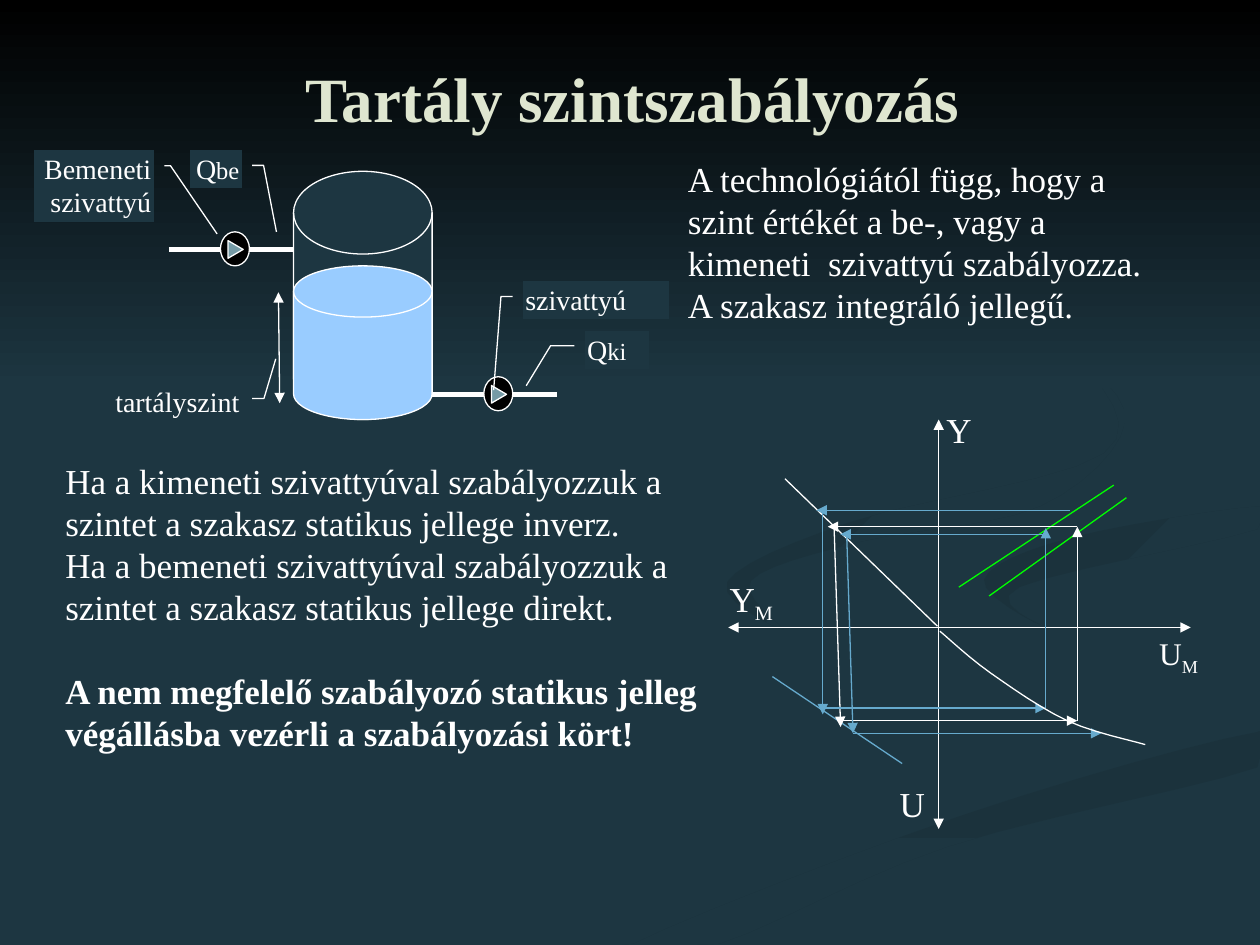
"""Build the slide on tank level control."""
import dataclasses
import itertools
import typing

import lxml.etree
import pptx
import pptx.dml.color
import pptx.enum.shapes
import pptx.enum.text
import pptx.oxml.ns
import pptx.util

HUES = {"deep": "1D3641", "shade": "1B323C", "dim": "1C343E", "black": "000000",
        "white": "FFFFFF", "title": "DFE6D0", "water": "99CCFF", "steel": "759AA5",
        "blue": "66AACD", "green": "00FF00"}
FACE = "Times New Roman"
KIND = pptx.enum.shapes.MSO_SHAPE
SIDE = pptx.enum.text.PP_ALIGN
SLIM = (0.02, 0.01)
FLAT = (0.02, 0)
WIDE = (0.1, 0.05)
BOTH = ("headEnd", "tailEnd")
Spot = tuple[float, float]
Box = tuple[float, float, float, float]


class Run(typing.NamedTuple):
    text: str
    size: float = 20
    bold: bool = False
    base: int = 0


@dataclasses.dataclass
class Swoosh:
    dots: list[Spot]
    hues: tuple[str, str]
    turn: int = 0


@dataclasses.dataclass
class Label:
    box: Box
    level: float
    near: float
    bend: float
    tip: Spot
    runs: list[Run]
    side: typing.Any = SIDE.LEFT


@dataclasses.dataclass
class Line:
    start: Spot
    end: Spot
    hue: str = "white"
    ends: tuple[str, ...] = ()
    width: float = 0.75


@dataclasses.dataclass
class Loop:
    dots: list[Spot]
    past: str
    hue: str


def span(size: float) -> int:
    return pptx.util.Cm(size * 2.54)


def tint(name: str) -> pptx.dml.color.RGBColor:
    return pptx.dml.color.RGBColor.from_string(HUES[name])


def apply(part: typing.Any, style: dict[str, typing.Any]) -> None:
    for key, value in style.items():
        setattr(part, key, value)


def add(shapes: typing.Any, kind: typing.Any, box: Box, fill: str) -> typing.Any:
    shape = shapes.add_shape(kind, *map(span, box))
    shape.shadow.inherit = False
    shape.fill.solid()
    shape.fill.fore_color.rgb = tint(fill)
    shape.line.color.rgb = tint("white")
    shape.line.width = pptx.util.Pt(0.75)
    return shape


def smooth(dots: list[Spot], close: bool, steps: int = 6) -> list[Spot]:
    ring = [dots[-1], *dots, *dots[:2]] if close else [dots[0], *dots, dots[-1]]
    out = [dots[0]]
    for a, b, c, d in zip(ring, ring[1:], ring[2:], ring[3:]):
        for t in (step / steps for step in range(1, steps + 1)):
            out.append(tuple(q + t * (r - p + t * (2 * p - 5 * q + 4 * r - s
                                                   + t * (3 * q - p - 3 * r + s))) / 2
                             for p, q, r, s in zip(a, b, c, d)))
    return [(min(x, 10), min(y, 7.5)) for x, y in out]


def trace(shapes: typing.Any, dots: list[Spot], close: bool) -> typing.Any:
    marks = [(span(x), span(y)) for x, y in smooth(dots, close)]
    pen = shapes.build_freeform(*marks[0])
    pen.add_line_segments(marks[1:], close=close)
    shape = pen.convert_to_shape()
    shape.shadow.inherit = False
    return shape


def shade(shape: typing.Any, hues: tuple[str, str], turn: int) -> None:
    shape.line.fill.background()
    shape.fill.gradient()
    shape.fill.gradient_angle = -turn % 360
    for stop, hue in zip(shape.fill.gradient_stops, hues):
        stop.color.rgb = tint(hue)


def write(shape: typing.Any, paras: list[list[Run]], inset: Spot, hue: str = "white",
          side: typing.Any = SIDE.LEFT, middle: bool = False, gap: float = 0) -> None:
    frame = shape.text_frame
    across, down = map(span, inset)
    anchor, fit = pptx.enum.text.MSO_ANCHOR, pptx.enum.text.MSO_AUTO_SIZE
    apply(frame, {"word_wrap": True, "margin_left": across, "margin_right": across,
                  "margin_top": down, "margin_bottom": down,
                  "vertical_anchor": anchor.MIDDLE if middle else anchor.TOP,
                  "auto_size": fit.NONE if middle else fit.SHAPE_TO_FIT_TEXT})
    for spot, runs in enumerate(paras):
        para = frame.add_paragraph() if spot else frame.paragraphs[0]
        para.alignment = side
        if gap and spot == len(paras) - 1:
            para.space_before = pptx.util.Pt(gap)
        for item in runs:
            run = para.add_run()
            run.text = item.text
            apply(run.font, {"name": FACE, "size": pptx.util.Pt(item.size), "bold": item.bold})
            run.font.color.rgb = tint(hue)
            if item.base:
                run._r.get_or_add_rPr().set("baseline", str(item.base * 1000))


def draw(shapes: typing.Any, item: Line) -> None:
    straight = pptx.enum.shapes.MSO_CONNECTOR.STRAIGHT
    wire = shapes.add_connector(straight, *map(span, item.start + item.end))
    wire.line.color.rgb = tint(item.hue)
    wire.line.width = pptx.util.Pt(item.width)
    edge = wire.line._get_or_add_ln()
    for end in item.ends:
        lxml.etree.SubElement(edge, pptx.oxml.ns.qn("a:" + end), type="triangle")
    lxml.etree.SubElement(edge.getparent(), pptx.oxml.ns.qn("a:effectLst"))


def chain(shapes: typing.Any, loop: Loop) -> None:
    for (start, end), mark in zip(itertools.pairwise(loop.dots), loop.past):
        run, drop = end[0] - start[0], end[1] - start[1]
        rate = 0.05 / max(abs(run), abs(drop)) if mark == "+" else 0
        tip = (end[0] + run * rate, end[1] + drop * rate)
        draw(shapes, Line(start, tip, loop.hue, BOTH[1:]))


def pump(shapes: typing.Any, x: float, y: float) -> None:
    draw(shapes, Line((x, y), (x + 0.99, y), width=3))
    add(shapes, KIND.OVAL, (x + 0.41, y - 0.14, 0.23, 0.27), "black")
    add(shapes, KIND.FLOWCHART_EXTRACT, (x + 0.46, y - 0.06, 0.14, 0.12), "steel").rotation = 90


SWEEPS = [
    Swoosh([(7.81, 5.53), (6.82, 5.19), (5.75, 4.59), (5.86, 4.87), (7.14, 5.3), (7.86, 5.66),
            (7.14, 6.05), (4.99, 6.61), (3, 7.49), (3.61, 7.49), (5.64, 6.65), (7.69, 6.09),
            (7.99, 5.73)], ("deep", "dim")),
    Swoosh([(9.43, 5.7), (8.88, 5.35), (7.58, 4.98), (7.24, 4.64), (7.55, 5.05), (8.68, 5.44),
            (9.18, 5.81), (8.94, 6.05)], ("deep", "dim"), 45),
    Swoosh([(5.03, 7.49), (5.71, 7.49), (7.52, 6.72), (9.98, 6.09), (9.98, 5.81),
            (7.64, 6.47)], ("shade", "deep"), 90),
    Swoosh([(7.81, 4.6), (8.26, 4.96), (8.09, 4.66), (9.98, 4.2), (9.98, 4.02), (8.49, 4.27)],
           ("shade", "deep"), 45),
    Swoosh([(6.83, 4.3), (8.25, 4.02), (8.93, 3.35), (8.43, 2.75), (7.62, 2.33), (8.55, 2.85),
            (8.76, 3.6), (6.76, 4.14), (5.77, 4.62), (6.22, 5), (5.96, 4.61)],
           ("shade", "deep"), 45)]
LABELS = [
    Label((1.51, 1.19, 0.41, 0.3), 0.41, 1.2, 1.42, (2.17, 1.67),
          [Run("Q", 16), Run("be", 14)], SIDE.RIGHT),
    Label((4.64, 2.63, 0.51, 0.3), 0.38, -0.16, -0.53, (1.44, -0.91),
          [Run("Q", 16), Run("ki", 14)]),
    Label((0.75, 3.04, 1.17, 0.3), 0.41, 1.07, 1.15, (-0.64, 1.23),
          [Run("tartályszint", 16)], SIDE.RIGHT),
    Label((4.15, 2.23, 1.16, 0.3), 0.41, -0.07, -0.15, (2.89, -0.2), [Run("szivattyú", 16)]),
    Label((0.27, 1.19, 0.95, 0.57), 0.22, 1.09, 1.14, (1.17, 1.53),
          [Run("Bemeneti szivattyú", 16)], SIDE.RIGHT)]
LINES = [
    Line((2.21, 2.32), (2.22, 3.2), ends=BOTH), Line((7.45, 6.58), (7.45, 3.33), ends=BOTH),
    Line((5.78, 4.98), (9.45, 4.98), ends=BOTH), Line((6.23, 3.8), (7.44, 4.97)),
    Line((6.13, 5.37), (7.16, 6.06), "blue"),
    Line((8.84, 3.85), (7.61, 4.66), "green"), Line((8.94, 3.95), (7.85, 4.73), "green")]
LOOPS = [
    Loop([(8.55, 5.72), (8.55, 4.18), (6.62, 4.18), (6.67, 5.72), (8.55, 5.72)], ".++.", "white"),
    Loop([(8.49, 4.05), (6.53, 4.05), (6.53, 5.62), (8.3, 5.62), (8.3, 4.24), (6.72, 4.24),
          (6.77, 5.82), (8.74, 5.82)], "++.++..", "blue")]
TEXTS = [
    ((0.77, 0.45, 8.5, 0.64), [[Run("Tartály szintszabályozás", 36, True)]], WIDE,
     {"hue": "title", "side": SIDE.CENTER, "middle": True}),
    ((5.44, 1.24, 3.69, 1.36),
     [[Run("A technológiától függ, hogy a szint értékét a be-, vagy a kimeneti  szivattyú szabályozza.")],
      [Run("A szakasz integráló jellegű.")]], SLIM, {}),
    ((0.42, 3.6, 5.28, 2.43),
     [[Run("Ha a kimeneti szivattyúval szabályozzuk a szintet a szakasz statikus jellege inverz.")],
      [Run("Ha a bemeneti szivattyúval szabályozzuk a szintet a szakasz statikus jellege direkt.")],
      [Run("A nem megfelelő szabályozó statikus jelleg végállásba vezérli a szabályozási kört!",
           bold=True)]], WIDE, {"gap": 24}),
    ((7.49, 3.24, 0.28, 0.33), [[Run("Y")]], FLAT, {}),
    ((9.18, 5.03, 0.4, 0.3), [[Run("U", 18), Run("M", 18, base=-25)]], FLAT, {}),
    ((5.77, 4.58, 0.43, 0.33), [[Run("Y"), Run("M", base=-25)]], FLAT, {}),
    ((7.12, 6.21, 0.28, 0.33), [[Run("U")]], FLAT, {})]


def main() -> None:
    deck = pptx.Presentation()
    apply(deck, {"slide_width": span(10), "slide_height": span(7.5)})
    slide = deck.slides.add_slide(deck.slide_layouts[6])
    slide.background.fill.solid()
    slide.background.fill.fore_color.rgb = tint("deep")
    shapes = slide.shapes
    for item in SWEEPS:
        shade(trace(shapes, item.dots, True), item.hues, item.turn)
    shade(add(shapes, KIND.RECTANGLE, (0, 0, 10, 3.08), "deep"), ("black", "deep"), 90)
    for box, paras, inset, style in TEXTS:
        write(shapes.add_textbox(*map(span, box)), paras, inset, **style)
    for top, fill in ((1.36, "deep"), (2.11, "water")):
        add(shapes, KIND.FLOWCHART_MAGNETIC_DISK, (2.33, top, 1.1, 3.33 - top), fill)
    pump(shapes, 3.43, 3.13)
    pump(shapes, 1.34, 1.98)
    for item in LABELS:
        shape = add(shapes, KIND.LINE_CALLOUT_2_NO_BORDER, item.box, "deep")
        for spot, bend in enumerate((item.level, item.near, item.level, item.bend, *item.tip)):
            shape.adjustments[spot] = bend
        write(shape, [item.runs], SLIM, side=item.side)
    for item in LINES:
        draw(shapes, item)
    for loop in LOOPS:
        chain(shapes, loop)
    bow = trace(shapes, [(7.46, 5.01), (7.86, 5.34), (8.47, 5.72), (9.09, 5.91)], False)
    bow.fill.background()
    bow.line.color.rgb = tint("white")
    bow.line.width = pptx.util.Pt(0.75)
    deck.save("out.pptx")


if __name__ == "__main__":
    main()
